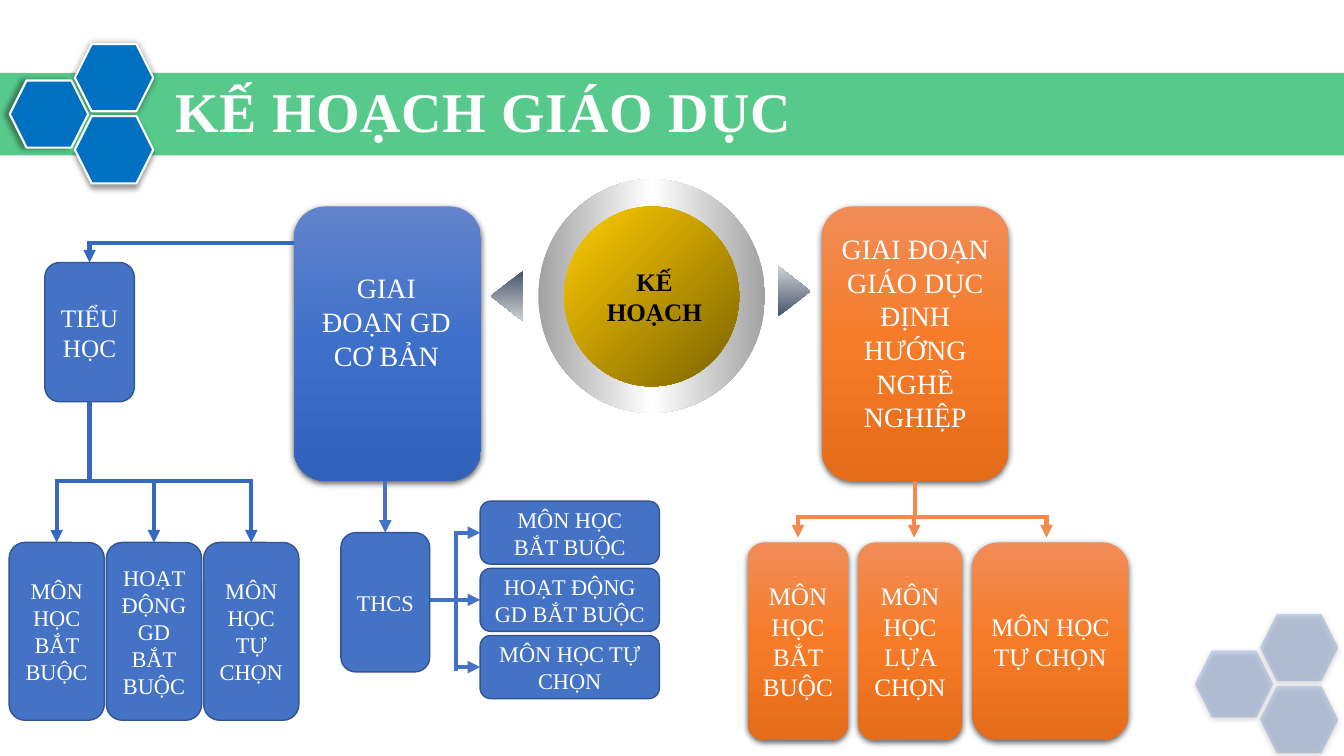
from lxml import etree
from pptx import Presentation
from pptx.dml.color import RGBColor
from pptx.enum.shapes import MSO_CONNECTOR, MSO_SHAPE
from pptx.enum.text import MSO_ANCHOR, MSO_AUTO_SIZE, PP_ALIGN
from pptx.oxml.ns import qn
from pptx.util import Pt

RECT, ROUND = MSO_SHAPE.RECTANGLE, MSO_SHAPE.ROUNDED_RECTANGLE
HEXAGON, OVAL, UP_ARROW = MSO_SHAPE.HEXAGON, MSO_SHAPE.OVAL, MSO_SHAPE.UP_ARROW
STRAIGHT = MSO_CONNECTOR.STRAIGHT
MIDDLE, CENTER = MSO_ANCHOR.MIDDLE, PP_ALIGN.CENTER
FIT_SHAPE = MSO_AUTO_SIZE.SHAPE_TO_FIT_TEXT
TOP, LEFT, BOTTOM = 0, 1, 2

BLUE, DARK_BLUE, TREE_BLUE, ORANGE = "4472C4", "325491", "3568C1", "F2894E"
BLUE_FADE = [(0, "6183CB"), (50, "3E70CA"), (100, "3062BB")]
ORANGE_FADE = [(0, "F18C57"), (50, "F67B28"), (100, "E56C19")]
STEEL_FADE = [(0, "44546A"), (100, "D0D2D5")]
SOFT_SHADOW = ("000000", 63, 4.5, 1.5, 90)


def rgb(value):
    return RGBColor.from_string(value)


def child(parent, tag, **attributes):
    return etree.SubElement(parent, qn(tag), {k: str(v) for k, v in attributes.items()})


def add_shadow(effects, color, alpha, blur, distance, angle):
    outer = child(effects, "a:outerShdw", blurRad=Pt(blur), dist=Pt(distance),
                  dir=angle * 60000, algn="ctr", rotWithShape=0)
    child(child(outer, "a:srgbClr", val=color), "a:alpha", val=alpha * 1000)


class Board:
    font = "Times New Roman"

    def __init__(self, slide):
        self.slide = slide
        self.shapes = slide.shapes

    def fill_text(self, frame, text, size, color="FFFFFF", bold=False):
        frame.word_wrap = True
        for i, line in enumerate(text.split("\n")):
            paragraph = frame.paragraphs[0] if i == 0 else frame.add_paragraph()
            paragraph.alignment = CENTER
            run = paragraph.add_run()
            run.text = line
            run.font.name, run.font.size, run.font.bold = self.font, Pt(size), bold
            run.font.color.rgb = rgb(color)

    def title(self, box, text):
        title = self.shapes.title
        title.left, title.top, title.width, title.height = map(Pt, box)
        frame = title.text_frame
        self.fill_text(frame, text, 40, "FEFEFE", True)
        frame.word_wrap, frame.auto_size = False, FIT_SHAPE
        frame.vertical_anchor = MIDDLE
        props = title.element.find(".//" + qn("a:rPr"))
        props.set("spc", "50")
        effects = etree.Element(qn("a:effectLst"))
        add_shadow(effects, "4472C4", 60, 2, 3, 45)
        props.find(qn("a:solidFill")).addnext(effects)
        # The band is drawn first, so the title goes above it
        self.shapes[-1].element.addnext(title.element)

    def text(self, box, text, size, color="FFFFFF", bold=False):
        frame = self.shapes.add_textbox(*map(Pt, box)).text_frame
        self.fill_text(frame, text, size, color, bold)
        frame.auto_size = FIT_SHAPE

    def shape(self, kind, box, fill, alpha=None, angle=90, line=None, shadow=None):
        shape = self.shapes.add_shape(kind, *map(Pt, box))
        props = shape.element.spPr
        shape.shadow.inherit = False
        if shadow:
            add_shadow(props.find(qn("a:effectLst")), *shadow)
        if isinstance(fill, str):
            shape.fill.solid()
            shape.fill.fore_color.rgb = rgb(fill)
            if alpha:
                child(props.find(qn("a:solidFill"))[0], "a:alpha", val=alpha * 1000)
        else:
            gradient = etree.Element(qn("a:gradFill"), rotWithShape="1")
            stops = child(gradient, "a:gsLst")
            for position, color in fill:
                child(child(stops, "a:gs", pos=position * 1000), "a:srgbClr", val=color)
            child(gradient, "a:lin", ang=angle * 60000, scaled=0)
            props.find(qn("a:prstGeom")).addnext(gradient)
        if line:
            shape.line.color.rgb, shape.line.width = rgb(line[0]), Pt(line[1])
        else:
            shape.line.fill.background()
        return shape

    def node(self, box, text, size, fill=BLUE):
        plain = fill == BLUE
        node = self.shape(ROUND, box, fill, line=(DARK_BLUE, 1) if plain else None,
                          shadow=None if plain else SOFT_SHADOW)
        node.text_frame.vertical_anchor = MIDDLE
        self.fill_text(node.text_frame, text, size)
        return node

    def line(self, start, end, color, arrow=False, begin_at=None, end_at=None):
        line = self.shapes.add_connector(STRAIGHT, *map(Pt, start + end))
        if begin_at:
            line.begin_connect(*begin_at)
        if end_at:
            line.end_connect(*end_at)
        line.line.color.rgb, line.line.width = rgb(color), Pt(3)
        props = line.element.spPr
        if arrow:
            child(props.find(qn("a:ln")), "a:tailEnd", type="triangle")
        child(props, "a:effectLst")


def build():
    deck = Presentation()
    deck.slide_width, deck.slide_height = Pt(960), Pt(540)
    board = Board(deck.slides.add_slide(deck.slide_layouts[5]))

    # Heading band, hexagon clusters and title
    board.shape(RECT, (0, 52, 960, 59), "00B050", alpha=66)
    offsets = [(0, 0), (46.5, -26), (46.5, 25.5)]
    glows = [("000000", 40, 4, 3, 180), ("000000", 40, 5, 0, 0), ("000000", 40, 4, 3, 90)]
    for (dx, dy), glow in zip(offsets, glows):
        board.shape(HEXAGON, (7 + dx, 57.5 + dy, 56, 48), "0070C0",
                    line=("FFFFFF", 1.5), shadow=glow)
    for dx, dy in offsets:
        board.shape(HEXAGON, (853.5 + dx, 464.5 + dy, 56, 48), BLUE, alpha=26,
                    shadow=SOFT_SHADOW)
    board.title((116, 51, 459, 55.5), "KẾ HOẠCH GIÁO DỤC")

    # Central plan with its two pointers
    for left, top, turn in [(344, 200, 270), (549.5, 196.5, 90)]:
        pointer = board.shape(UP_ARROW, (left, top, 36, 23), STEEL_FADE, angle=0)
        pointer.adjustments[0], pointer.adjustments[1] = 0.52, 1
        pointer.rotation = turn
        pointer.element.spPr.find(qn("a:xfrm")).set("flipH", "1")
    board.shape(OVAL, (384.5, 128, 162, 167),
                [(0, "A2A2A2"), (50, "FFFFFF"), (100, "A2A2A2")], angle=0)
    board.shape(OVAL, (403, 147.5, 125, 128.5), [(0, "FFCC00"), (100, "7C6300")], angle=45)
    board.text((412, 186.5, 111, 51), "KẾ HOẠCH", 18, "000000", True)

    # The two stages
    board.shape(ROUND, (210, 147.5, 133.5, 196), BLUE_FADE, shadow=SOFT_SHADOW)
    career = board.shape(ROUND, (587, 147.5, 133.5, 196), ORANGE_FADE, shadow=SOFT_SHADOW)
    board.text((220, 190, 112, 80), "GIAI ĐOẠN GD CƠ BẢN", 20)
    board.text((591, 162, 125.5, 153), "GIAI ĐOẠN GIÁO DỤC ĐỊNH HƯỚNG NGHỀ NGHIỆP", 20)

    # Primary school and its subjects
    primary = board.node((32, 187.5, 64, 99.5), "TIỂU HỌC", 18)
    board.line((210, 173.5), (64, 173.5), TREE_BLUE)
    board.line((64, 172), (64, 187.5), TREE_BLUE, True, end_at=(primary, TOP))
    board.line((64, 287), (64, 343.5), TREE_BLUE, begin_at=(primary, BOTTOM))
    board.line((39, 343.5), (180.5, 343.5), TREE_BLUE)
    primary_subjects = ["MÔN HỌC BẮT BUỘC", "HOẠT ĐỘNG\nGD\nBẮT\nBUỘC", "MÔN HỌC TỰ CHỌN"]
    for i, subject in enumerate(primary_subjects):
        left = 6.5 + 69.5 * i
        node = board.node((left, 387.5, 68, 127), subject, 16)
        board.line((left + 34, 342), (left + 34, 387.5), TREE_BLUE, True, end_at=(node, TOP))

    # Lower secondary school and its subjects
    secondary = board.node((243.5, 380.5, 63.5, 99.5), "THCS", 16)
    board.line((275.25, 343.5), (275.25, 380.5), BLUE, True, end_at=(secondary, TOP))
    board.line((325.5, 380.5), (325.5, 479.5), BLUE)
    secondary_subjects = ["MÔN HỌC BẮT BUỘC", "HOẠT ĐỘNG GD BẮT BUỘC", "MÔN HỌC TỰ CHỌN"]
    for i, (subject, start) in enumerate(zip(secondary_subjects, [324, 307, 324])):
        top = 358 + 48 * i
        node = board.node((343, top, 128, 45), subject, 16)
        board.line((start, top + 22.5), (343, top + 22.5), BLUE, True, end_at=(node, LEFT))

    # Career stage subjects
    board.line((653.75, 343.5), (653.75, 369.5), ORANGE, begin_at=(career, BOTTOM))
    board.line((569, 369.5), (749, 369.5), ORANGE)
    for left, width, arrow_x, subject in [(534, 72, 570, "MÔN HỌC BẮT BUỘC"),
                                          (613, 74, 653, "MÔN HỌC LỰA CHỌN"),
                                          (694.5, 111.5, 747.5, "MÔN HỌC TỰ CHỌN")]:
        board.node((left, 387.5, width, 141), subject, 18, ORANGE_FADE)
        board.line((arrow_x, 368), (arrow_x, 384), ORANGE, True)

    deck.save("out.pptx")


if __name__ == "__main__":
    build()
